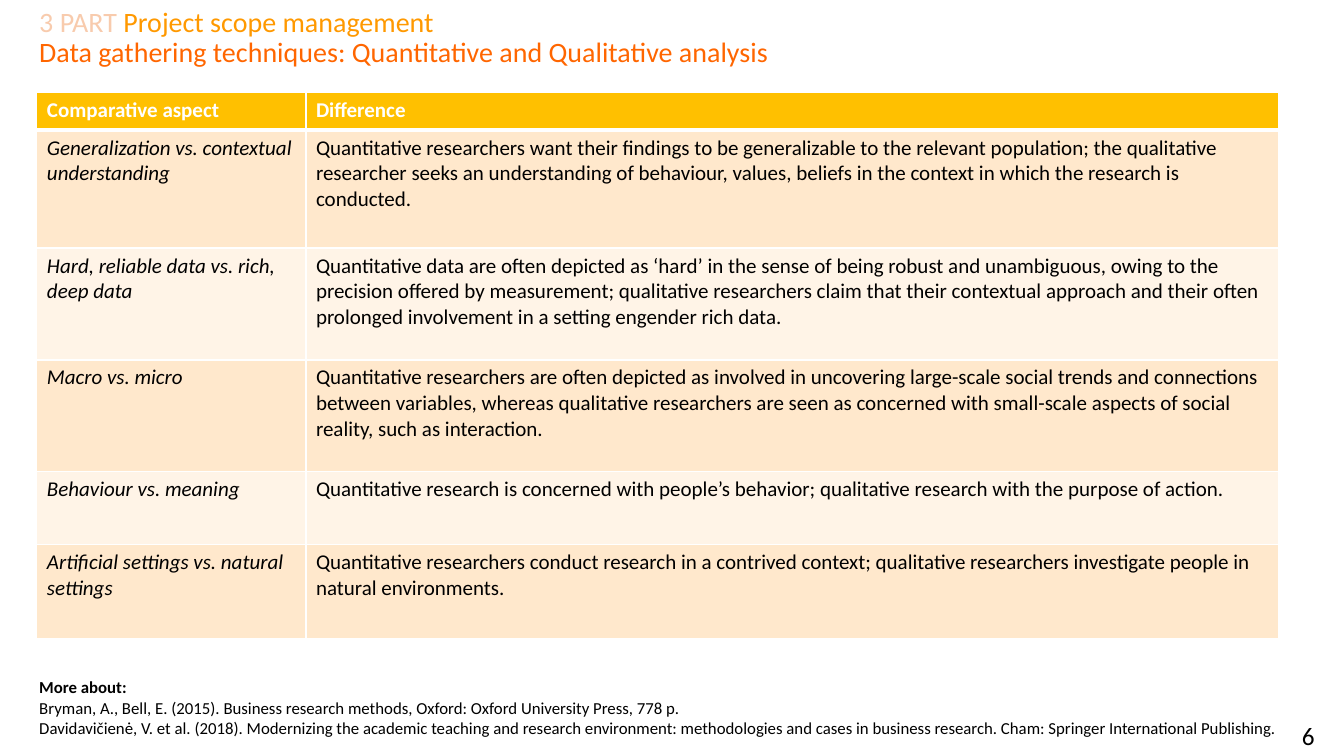
from lxml import etree
from pptx import Presentation
from pptx.dml.color import RGBColor
from pptx.enum.text import MSO_ANCHOR
from pptx.oxml.ns import qn
from pptx.util import Cm, Pt

MIDDLE = MSO_ANCHOR.MIDDLE
TOP = MSO_ANCHOR.TOP
BLACK, WHITE = "000000", "FFFFFF"
BANDS = ["FFE8CC", "FFF4E7"]


def tint(code):
    return RGBColor.from_string(code)


class Deck:
    """Holds the style and the current slide, and adds elements to it."""

    face = "Calibri"

    def __init__(self, wide, high):
        self.show = Presentation()
        self.show.slide_width, self.show.slide_height = Cm(wide), Cm(high)
        self.slide = self.show.slides.add_slide(self.show.slide_layouts[6])

    def run(self, para, text, size, color=BLACK, **look):
        run = para.add_run()
        run.text = text
        style = {"name": self.face, "size": Pt(size), **look}
        for key, value in style.items():
            setattr(run.font, key, value)
        run.font.color.rgb = tint(color)

    def box(self, place, anchor=TOP):
        shape = self.slide.shapes.add_textbox(*map(Cm, place))
        frame = shape.text_frame
        frame.word_wrap = True
        frame.vertical_anchor = anchor
        return frame

    def lines(self, place, rows, size):
        frame = self.box(place)
        for i, (text, look) in enumerate(rows):
            para = frame.add_paragraph() if i else frame.paragraphs[0]
            self.run(para, text, size, **look)

    def title(self, place, rows, size):
        para = self.box(place, MIDDLE).paragraphs[0]
        para.line_spacing = 0.9
        for i, row in enumerate(rows):
            if i:
                para.add_line_break()
            for text, color in row:
                self.run(para, text, size, color)

    def edge(self, cell, side, width):
        props = cell._tc.get_or_add_tcPr()
        line = etree.SubElement(props, qn("a:ln" + side), w=str(Pt(width)))
        fill = etree.SubElement(line, qn("a:solidFill"))
        etree.SubElement(fill, qn("a:srgbClr"), val=WHITE)

    def table(self, left, top, cols, highs, rows, size):
        place = left, top, sum(cols), sum(highs)
        shape = self.slide.shapes.add_table(len(rows), len(cols), *map(Cm, place))
        grid = shape.table
        for col, width in zip(grid.columns, cols):
            col.width = Cm(width)
        for r, (high, row) in enumerate(zip(highs, rows)):
            grid.rows[r].height = Cm(high)
            for c, text in enumerate(row):
                cell = grid.cell(r, c)
                widths = {"L": 1, "R": 1, "T": 3 if r == 1 else 1, "B": 1 if r else 3}
                for side, width in widths.items():
                    self.edge(cell, side, width)
                cell.fill.solid()
                cell.fill.fore_color.rgb = tint(BANDS[(r - 1) % 2] if r else "FFC000")
                self.run(cell.text_frame.paragraphs[0], text, size,
                         BLACK if r else WHITE, bold=r == 0, italic=r > 0 and c == 0)


ASPECTS = [
    ("Comparative aspect", "Difference"),
    ("Generalization vs. contextual understanding",
     "Quantitative researchers want their findings to be generalizable to the relevant "
     "population; the qualitative researcher seeks an understanding of behaviour, values, "
     "beliefs in the context in which the research is conducted."),
    ("Hard, reliable data vs. rich, deep data",
     "Quantitative data are often depicted as ‘hard’ in the sense of being robust and "
     "unambiguous, owing to the precision offered by measurement; qualitative researchers "
     "claim that their contextual approach and their often prolonged involvement in a "
     "setting engender rich data."),
    ("Macro vs. micro",
     "Quantitative researchers are often depicted as involved in uncovering large-scale "
     "social trends and connections between variables, whereas qualitative researchers are "
     "seen as concerned with small-scale aspects of social reality, such as interaction."),
    ("Behaviour vs. meaning",
     "Quantitative research is concerned with people’s behavior; qualitative research with "
     "the purpose of action."),
    ("Artificial settings vs. natural settings",
     "Quantitative researchers conduct research in a contrived context; qualitative "
     "researchers investigate people in natural environments."),
]
SOURCES = [
    ("More about:", {"bold": True}),
    ("Bryman, A., Bell, E. (2015). Business research methods, Oxford: Oxford University "
     "Press, 778 p.", {}),
    ("Davidavičienė, V. et al. (2018). Modernizing the academic teaching and research "
     "environment: methodologies and cases in business research. Cham: Springer "
     "International Publishing.", {}),
]
HEADING = [
    [("3 PART ", "F8CBAD"), ("Project scope management", "FF9900")],
    [("Data gathering techniques: Quantitative and Qualitative analysis", "FF6600")],
]


def main():
    deck = Deck(33.87, 19.05)
    deck.title((0.74, 0.74, 32.41, 0.46), HEADING, 20)
    deck.lines((32.56, 18.03, 1.17, 1.02), [("6", {})], 18)
    deck.lines((0.74, 16.94, 31.83, 1.8), SOURCES, 12)
    deck.table(0.93, 2.34, [6.78, 24.51], [0.94, 2.97, 2.82, 2.82, 1.83, 2.36], ASPECTS, 15)
    deck.show.save("out.pptx")


if __name__ == "__main__":
    main()
